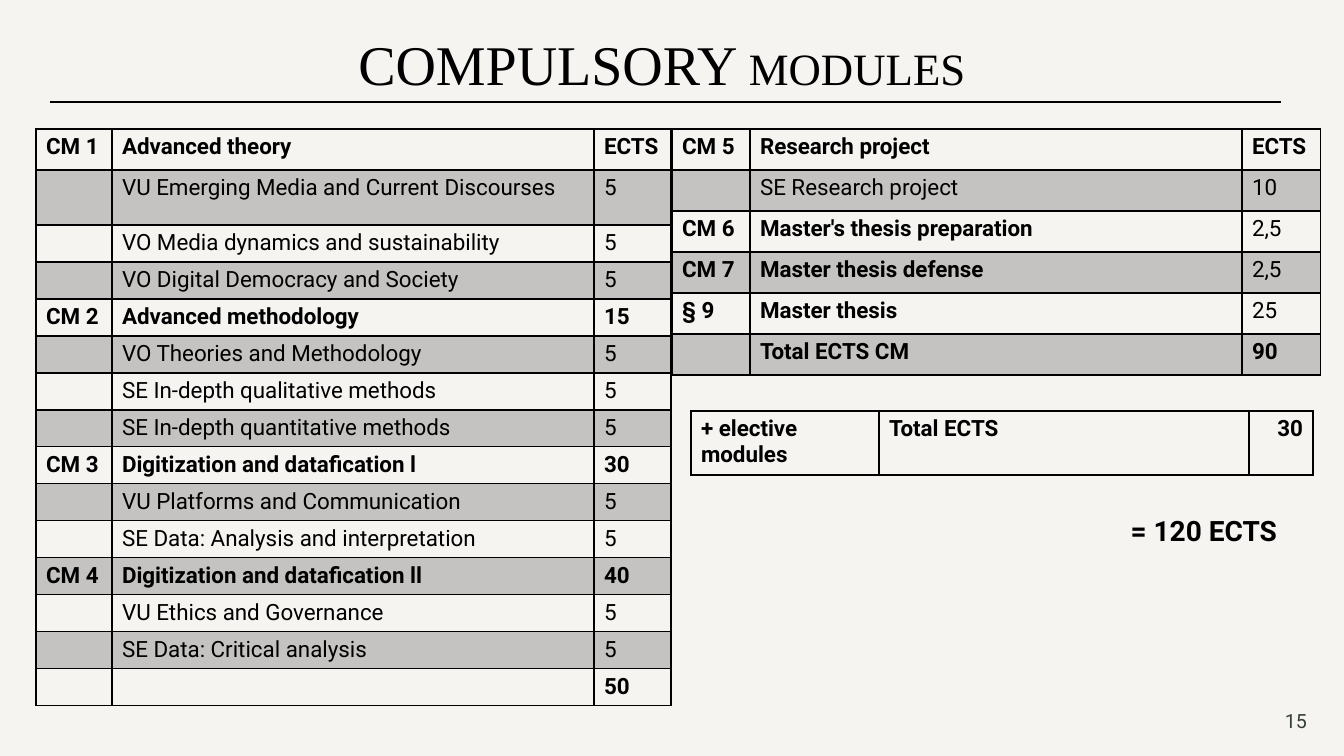
import dataclasses

import lxml.etree
import pptx
import pptx.dml.color
import pptx.enum.shapes
import pptx.enum.text
import pptx.oxml.ns
import pptx.util

ALIGN = pptx.enum.text.PP_ALIGN
ANCHOR = pptx.enum.text.MSO_ANCHOR
EMU_PER_PX = 914400 / 100.8


@dataclasses.dataclass(frozen=True)
class Theme:
    paper: str = "F5F4F1"
    band: str = "C4C3C1"
    ink: str = "000000"
    number_ink: str = "35403A"
    title_font: str = "Times New Roman"
    body_font: str = "Roboto"
    title_size: int = 40
    title_small_size: int = 32
    total_size: int = 20
    table_size: int = 16
    number_size: int = 14


THEME = Theme()

# Code, name, credits, bold columns
LEFT_ROWS = [
    ("CM 1", "Advanced theory", "ECTS", "012"),
    ("", "VU Emerging Media and Current Discourses", "5", ""),
    ("", "VO Media dynamics and sustainability", "5", ""),
    ("", "VO Digital Democracy and Society", "5", ""),
    ("CM 2", "Advanced methodology", "15", "012"),
    ("", "VO Theories and Methodology", "5", ""),
    ("", "SE In-depth qualitative methods", "5", ""),
    ("", "SE In-depth quantitative methods", "5", ""),
    ("CM 3", "Digitization and datafication l", "30", "012"),
    ("", "VU Platforms and Communication", "5", ""),
    ("", "SE Data: Analysis and interpretation", "5", ""),
    ("CM 4", "Digitization and datafication ll", "40", "012"),
    ("", "VU Ethics and Governance", "5", ""),
    ("", "SE Data: Critical analysis", "5", ""),
    ("", "", "50", "2"),
]
RIGHT_ROWS = [
    ("CM 5", "Research project", "ECTS", "012"),
    ("", "SE Research project", "10", ""),
    ("CM 6", "Master's thesis preparation", "2,5", "01"),
    ("CM 7", "Master thesis defense", "2,5", "01"),
    ("§ 9", "Master thesis", "25", "01"),
    ("", "Total ECTS CM", "90", "12"),
]
ELECTIVE_ROWS = [("+ elective modules", "Total ECTS", "30", "012")]


def px(length):
    return pptx.util.Emu(round(length * EMU_PER_PX))


def rgb(value):
    return pptx.dml.color.RGBColor.from_string(value)


def add_span(para, text, color=THEME.ink, **font_format):
    span = para.add_run()
    span.text = text
    for name, value in font_format.items():
        setattr(span.font, name, value)
    span.font.color.rgb = rgb(color)


def add_text(page, area, align, spans, anchor=ANCHOR.TOP):
    """Add a text box; each span is a dict of arguments for add_span."""
    frame = page.shapes.add_textbox(*map(px, area)).text_frame
    frame.word_wrap = True
    frame.vertical_anchor = anchor
    para = frame.paragraphs[0]
    para.alignment = align
    for span in spans:
        add_span(para, **span)


def set_borders(cell, bottom_width):
    properties = cell._tc.get_or_add_tcPr()
    qn = pptx.oxml.ns.qn
    widths = {"a:lnL": 1, "a:lnR": 1, "a:lnT": 1, "a:lnB": bottom_width}
    for tag, width in widths.items():
        line = lxml.etree.SubElement(properties, qn(tag), w=str(pptx.util.Pt(width)))
        fill = lxml.etree.SubElement(line, qn("a:solidFill"))
        lxml.etree.SubElement(fill, qn("a:srgbClr"), val=THEME.ink)


def fill_cell(cell, text, bold, banded, bottom_width):
    set_borders(cell, bottom_width)
    if banded:
        cell.fill.solid()
        cell.fill.fore_color.rgb = rgb(THEME.band)
    else:
        cell.fill.background()
    para = cell.text_frame.paragraphs[0]
    if text:
        add_span(para, text, name=THEME.body_font, bold=bold,
                 size=pptx.util.Pt(THEME.table_size))
    else:
        para._p.get_or_add_endParaRPr().set("sz", str(THEME.table_size * 100))


def add_module_table(page, left, top, widths, heights, rows):
    """Add a table with a heavy line under its first row and every second row banded."""
    area = (left, top, sum(widths), sum(heights))
    table = page.shapes.add_table(len(rows), len(widths), *map(px, area)).table
    table.first_row = table.horz_banding = False
    for column, width in zip(table.columns, widths):
        column.width = px(width)
    for index, (row, height) in enumerate(zip(rows, heights)):
        table.rows[index].height = px(height)
        *texts, bold_columns = row
        for position, text in enumerate(texts):
            fill_cell(table.cell(index, position), text,
                      bold=str(position) in bold_columns,
                      banded=index % 2 == 1, bottom_width=1 if index else 2)
    return table


def add_rule(page, left, right, y):
    rule = page.shapes.add_connector(
        pptx.enum.shapes.MSO_CONNECTOR.STRAIGHT, px(left), px(y), px(right), px(y))
    rule.line.color.rgb = rgb(THEME.ink)
    rule.line.width = pptx.util.Pt(0.75)
    lxml.etree.SubElement(rule._element.spPr, pptx.oxml.ns.qn("a:effectLst"))


def main():
    deck = pptx.Presentation()
    deck.slide_width, deck.slide_height = px(1344), px(756)
    page = deck.slides.add_slide(deck.slide_layouts[6])
    page.background.fill.solid()
    page.background.fill.fore_color.rgb = rgb(THEME.paper)

    title_parts = [("COMPULSORY", THEME.title_size), (" MODULES", THEME.title_small_size)]
    add_text(page, (72, 25, 1180, 78), ALIGN.CENTER,
             [dict(text=text, name=THEME.title_font, size=pptx.util.Pt(size))
              for text, size in title_parts])
    add_rule(page, 50, 1281, 102)

    add_module_table(page, 36, 129, [76, 482, 77], [41, 55] + [37] * 13, LEFT_ROWS)
    add_module_table(page, 672, 129, [78, 492, 79], [41] * 6, RIGHT_ROWS)
    electives = add_module_table(page, 691, 411, [188, 370, 64], [63], ELECTIVE_ROWS)
    electives.cell(0, 2).text_frame.paragraphs[0].alignment = ALIGN.RIGHT

    add_text(page, (1119, 509, 175, 44), ALIGN.RIGHT,
             [dict(text="= 120 ECTS ", name=THEME.body_font, bold=True,
                   size=pptx.util.Pt(THEME.total_size))])
    add_text(page, (1260, 701, 57, 40), ALIGN.RIGHT,
             [dict(text="15", name=THEME.body_font, color=THEME.number_ink,
                   size=pptx.util.Pt(THEME.number_size))], ANCHOR.MIDDLE)
    deck.save("out.pptx")


if __name__ == "__main__":
    main()
